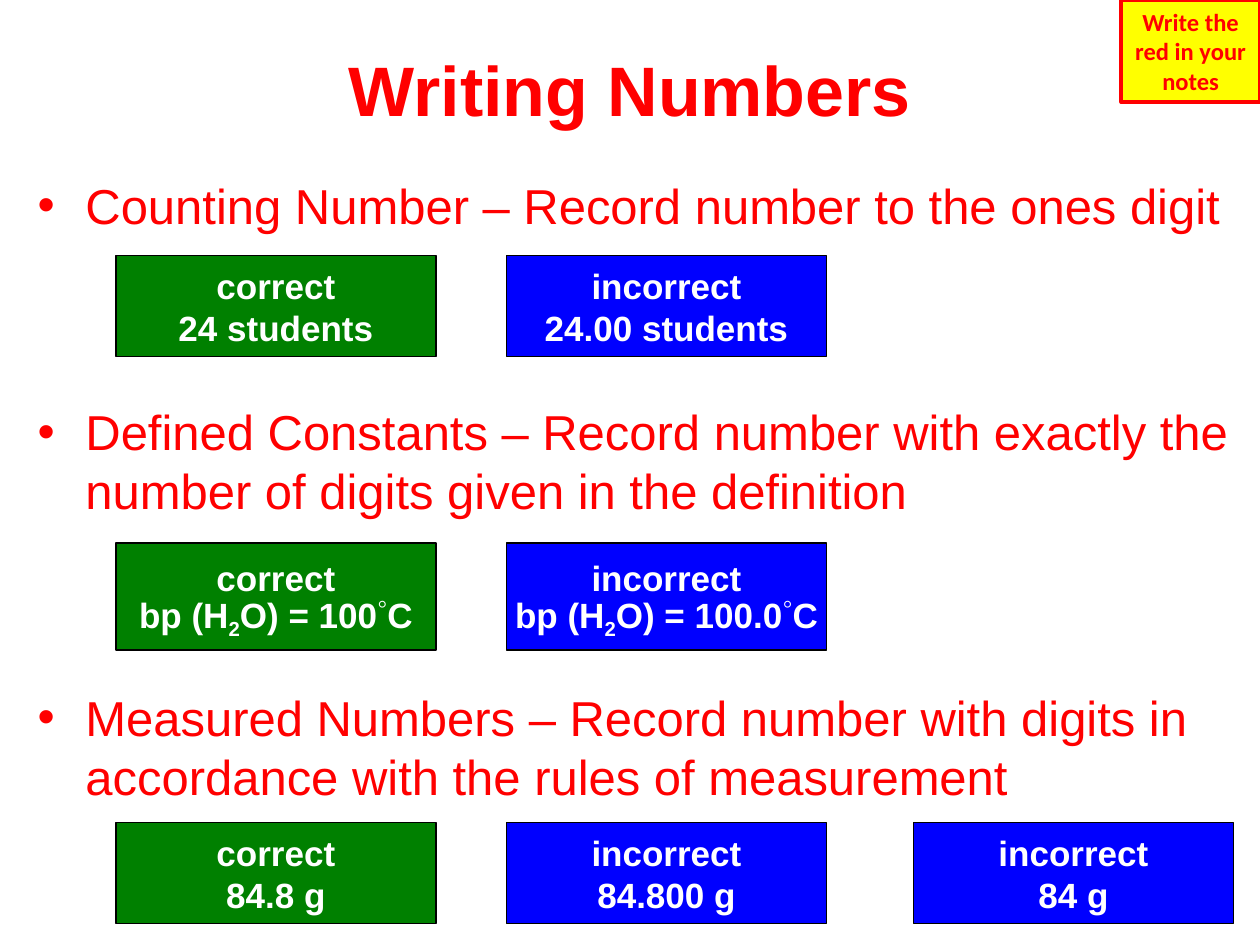
from lxml import etree
from pptx import Presentation
from pptx.dml.color import RGBColor
from pptx.enum.shapes import MSO_SHAPE
from pptx.enum.text import MSO_ANCHOR, MSO_AUTO_SIZE, PP_ALIGN
from pptx.oxml.ns import qn
from pptx.util import Inches, Pt

RECTANGLE = MSO_SHAPE.RECTANGLE
MIDDLE, TOP = MSO_ANCHOR.MIDDLE, MSO_ANCHOR.TOP
CENTER = PP_ALIGN.CENTER
GROW = MSO_AUTO_SIZE.SHAPE_TO_FIT_TEXT

WIDTH, HEIGHT = 10, 7.5
RED, GREEN, BLUE = "FF0000", "008000", "0000FF"
WHITE, BLACK, YELLOW = "FFFFFF", "000000", "FFFF00"

# Grid of the example boxes, in inches
COLUMNS = (0.92, 4.02, 7.25)
BOX_WIDTH = 2.54

# Marks inside a text part: baseline shift in thousandths of a percent
SUBSCRIPT, SUPERSCRIPT = -25000, 30000


def color(hex_string):
    return RGBColor.from_string(hex_string)


class SlideBuilder:
    """Holds the style and the current slide."""

    font = "Arial"

    def __init__(self, presentation):
        self.slide = presentation.slides.add_slide(presentation.slide_layouts[6])

    def style(self, run, size, hex_string, bold=False, font=None, baseline=None):
        run.font.name = font or self.font
        run.font.size = Pt(size)
        run.font.bold = bold
        run.font.color.rgb = color(hex_string)
        if baseline:
            run.font._element.set("baseline", str(baseline))

    def text_box(self, left, top, width, height, anchor):
        box = self.slide.shapes.add_textbox(*map(Inches, (left, top, width, height)))
        box.text_frame.word_wrap = True
        box.text_frame.vertical_anchor = anchor
        return box.text_frame

    def rectangle(self, left, top, width, height, fill, line, line_width):
        shape = self.slide.shapes.add_shape(
            RECTANGLE, *map(Inches, (left, top, width, height)))
        shape.shadow.inherit = False
        shape.fill.solid()
        shape.fill.fore_color.rgb = color(fill)
        shape.line.color.rgb = color(line)
        shape.line.width = Pt(line_width)
        shape.text_frame.vertical_anchor = MIDDLE
        return shape.text_frame

    def title(self, text):
        frame = self.text_box(0.2, 0.3, WIDTH - 0.4, 0.8, MIDDLE)
        frame.text = text
        paragraph = frame.paragraphs[0]
        paragraph.alignment = CENTER
        self.style(paragraph.runs[0], 40, RED, bold=True)

    def bullets(self, items):
        frame = self.text_box(0.2, 1.34, 9.7, 5.61, TOP)
        frame.text = "\n".join(items)
        for index, paragraph in enumerate(frame.paragraphs):
            paragraph.space_before = Pt(96 if index else 84)
            properties = paragraph._p.get_or_add_pPr()
            properties.set("marL", str(Inches(0.38)))
            properties.set("indent", str(-Inches(0.38)))
            etree.SubElement(properties, qn("a:buFont")).set("typeface", self.font)
            etree.SubElement(properties, qn("a:buChar")).set("char", "•")
            self.style(paragraph.runs[0], 28, RED)

    def example(self, column, top, height, parts, spacing=None):
        """Box with a verdict and a value; the first column is correct."""
        verdict, fill = ("incorrect", BLUE) if column else ("correct", GREEN)
        frame = self.rectangle(
            COLUMNS[column], top, BOX_WIDTH, height, fill, BLACK, 0.75)
        frame.word_wrap = False
        if spacing:
            frame.margin_top = Inches(0.03)
        frame.text = verdict
        heading, value = frame.paragraphs[0], frame.add_paragraph()
        self.style(heading.runs[0], 20, WHITE, bold=True)
        for text, size, baseline in parts:
            run = value.add_run()
            run.text = text
            self.style(run, size, WHITE, bold=True, baseline=baseline)
        for index, paragraph in enumerate((heading, value)):
            paragraph.alignment = CENTER
            if spacing:
                paragraph.line_spacing = Pt(spacing[index])

    def note(self, text):
        frame = self.rectangle(WIDTH - 1.1, 0, 1.1, 0.81, YELLOW, RED, 2.25)
        frame.word_wrap = True
        frame.auto_size = GROW
        frame.text = text
        paragraph = frame.paragraphs[0]
        paragraph.alignment = CENTER
        self.style(paragraph.runs[0], 14, RED, bold=True, font="Calibri")


def plain(text):
    return [(text, 20, None)]


def boiling_point(value):
    return [("bp (H", 20, None), ("2", 20, SUBSCRIPT), (f"O) = {value}", 20, None),
            ("◦", 28, SUPERSCRIPT), ("C", 20, None)]


def main():
    presentation = Presentation()
    presentation.slide_width = Inches(WIDTH)
    presentation.slide_height = Inches(HEIGHT)
    builder = SlideBuilder(presentation)

    # Heading and rules
    builder.title("Writing Numbers")
    builder.bullets([
        "Counting Number – Record number to the ones digit",
        "Defined Constants – Record number with exactly the number of digits "
        "given in the definition",
        "Measured Numbers – Record number with digits in accordance with the "
        "rules of measurement",
    ])

    # Example rows: top, height, values, line spacing
    rows = [
        (2.03, 0.8, [plain("24 students"), plain("24.00 students")], None),
        (4.31, 0.85, [boiling_point("100"), boiling_point("100.0")], (28, 24)),
        (6.53, 0.8, [plain("84.8 g"), plain("84.800 g"), plain("84 g")], None),
    ]
    for top, height, values, spacing in rows:
        for column, parts in enumerate(values):
            builder.example(column, top, height, parts, spacing)

    # Corner note
    builder.note("Write the red in your notes")

    presentation.save("out.pptx")


if __name__ == "__main__":
    main()
